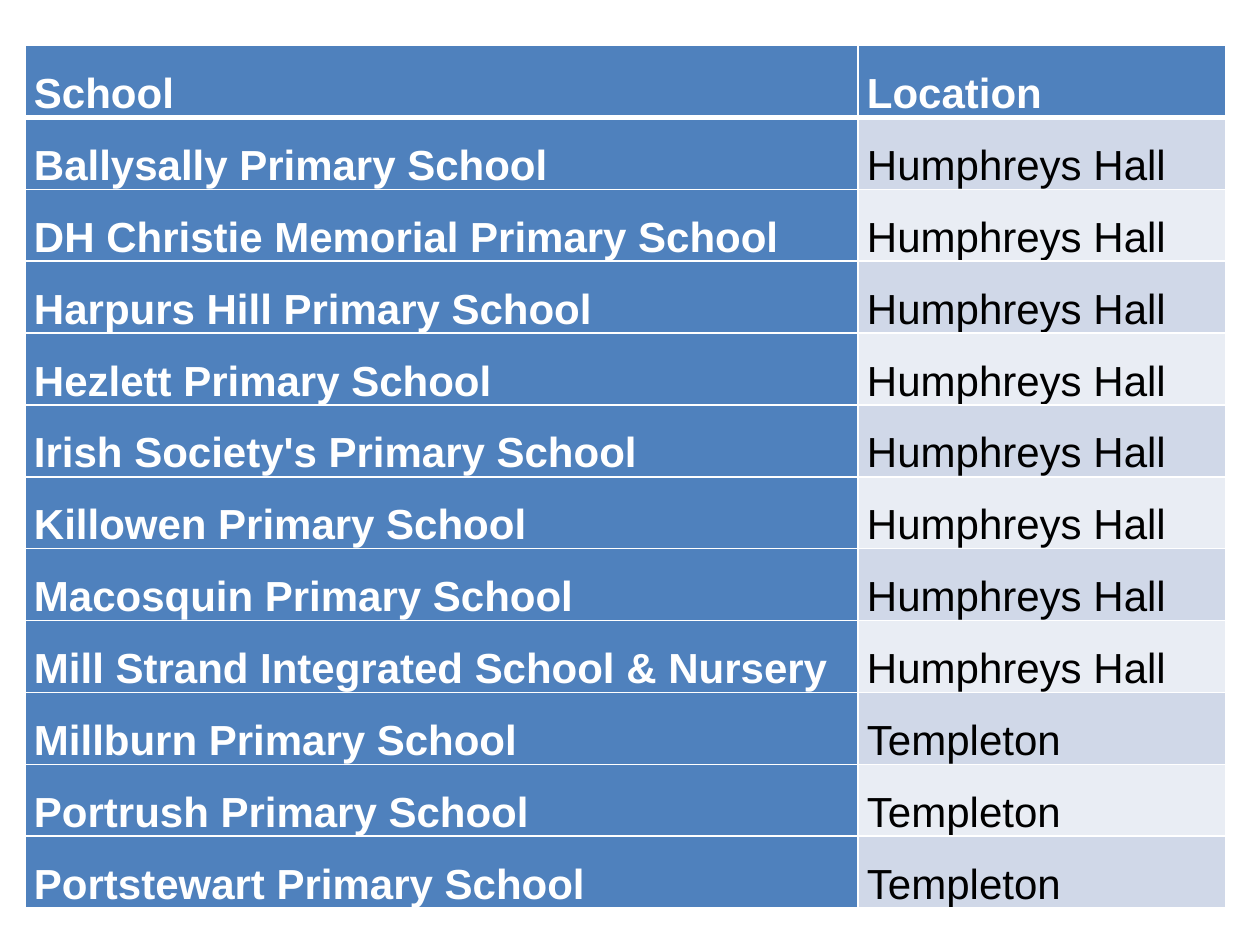
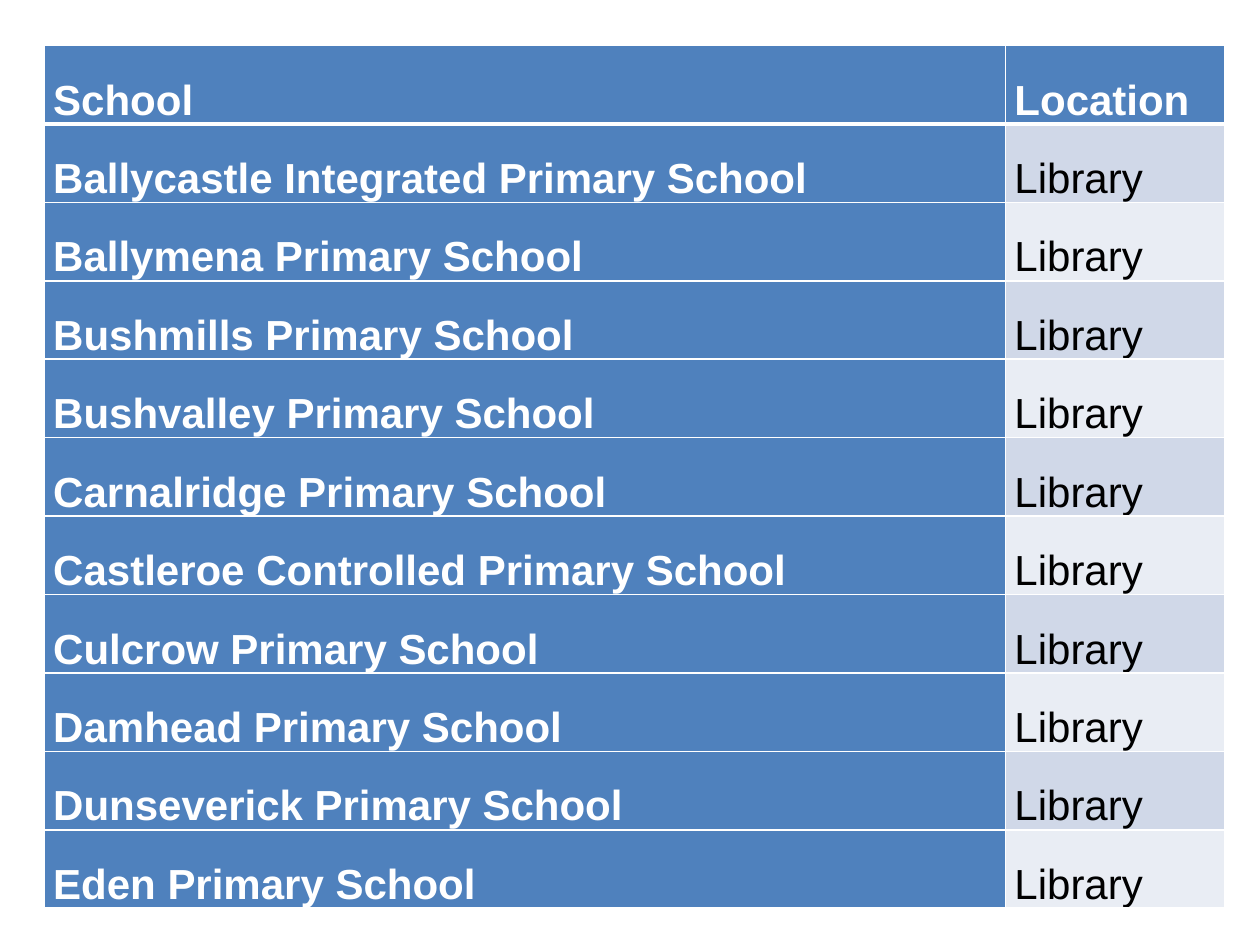
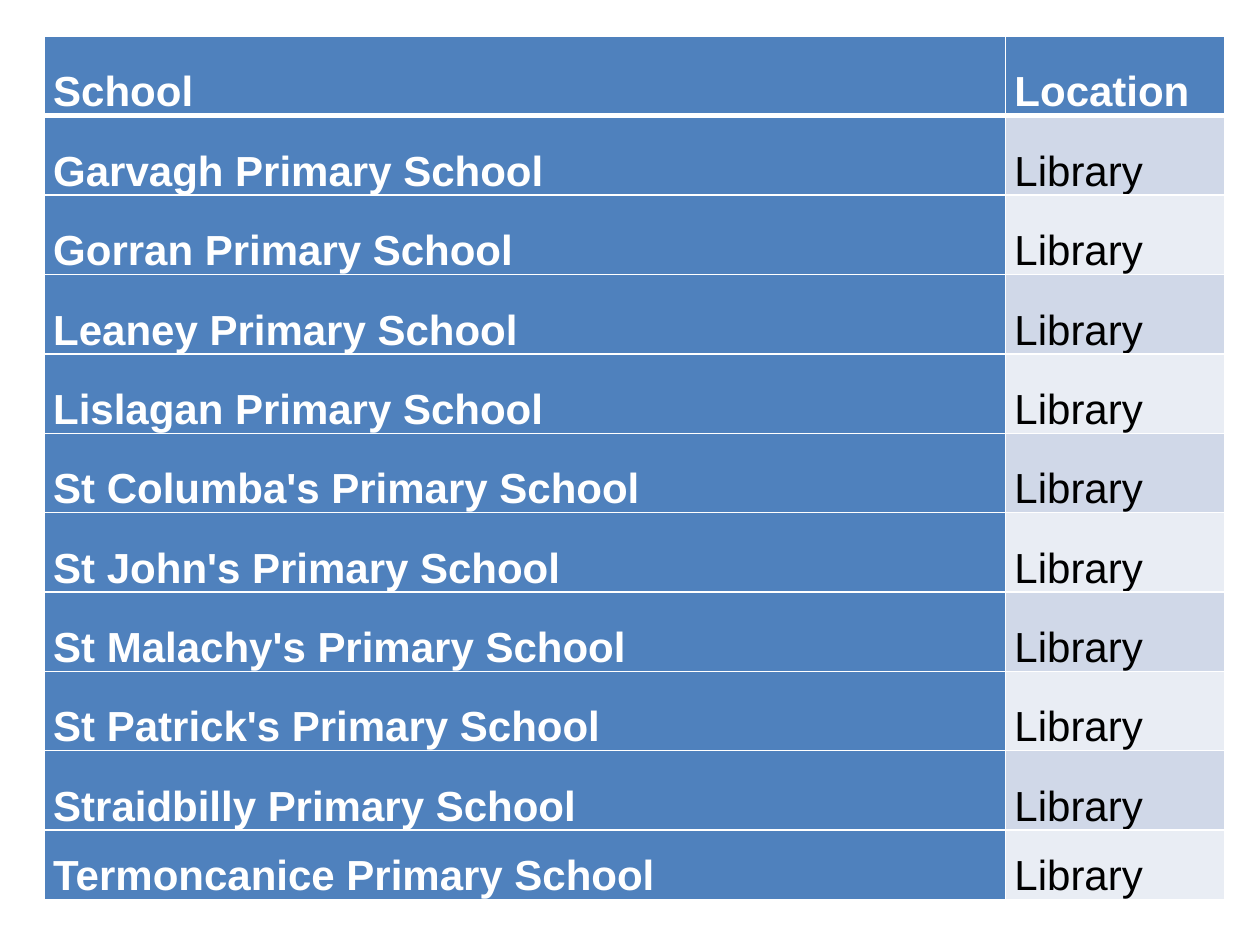
from lxml import etree
from pptx import Presentation
from pptx.dml.color import RGBColor
from pptx.enum import text
from pptx.oxml import ns
from pptx.util import Pt

# Shared style
BLUE = RGBColor(0x4F, 0x81, 0xBD)
BAND_DARK = RGBColor(0xD0, 0xD8, 0xE8)
BAND_LIGHT = RGBColor(0xE9, 0xED, 0xF4)
WHITE = RGBColor(0xFF, 0xFF, 0xFF)
BLACK = RGBColor(0x00, 0x00, 0x00)
FONT = "Arial"
FONT_SIZE = Pt(24)
LINE_SPACING = 1.07
CELL_MARGIN = Pt(5.04)
THIN, THICK = Pt(1), Pt(3)
TABLE_HEIGHT = 493.2
HEADER = ("School", "Location")

# Schools grouped by location
HALL_SCHOOLS = [
    "Ballysally Primary School",
    "DH Christie Memorial Primary School",
    "Harpurs Hill Primary School",
    "Hezlett Primary School",
    "Irish Society's Primary School",
    "Killowen Primary School",
    "Macosquin Primary School",
    "Mill Strand Integrated School & Nursery",
]
TEMPLETON_SCHOOLS = [
    "Millburn Primary School",
    "Portrush Primary School",
    "Portstewart Primary School",
]
LIBRARY_SCHOOLS_B_TO_E = [
    "Ballycastle Integrated Primary School",
    "Ballymena Primary School",
    "Bushmills Primary School",
    "Bushvalley Primary School",
    "Carnalridge Primary School",
    "Castleroe Controlled Primary School",
    "Culcrow Primary School",
    "Damhead Primary School",
    "Dunseverick Primary School",
    "Eden Primary School",
]
LIBRARY_SCHOOLS_G_TO_T = [
    "Garvagh Primary School",
    "Gorran Primary School",
    "Leaney Primary School",
    "Lislagan Primary School",
    "St Columba's Primary School",
    "St John's Primary School",
    "St Malachy's Primary School",
    "St Patrick's Primary School",
    "Straidbilly Primary School",
    "Termoncanice Primary School",
]


def located(schools, location):
    return [(school, location) for school in schools]


class Deck:
    """Holds the presentation, its style and the current slide."""

    def __init__(self):
        self.prs = Presentation()
        self.prs.slide_width, self.prs.slide_height = Pt(720), Pt(540)
        self.slide = None

    def new_slide(self):
        self.slide = self.prs.slides.add_slide(self.prs.slide_layouts[6])

    def borders(self, cell, top, bottom):
        tc_pr = cell._tc.get_or_add_tcPr()
        widths = {"lnL": THIN, "lnR": THIN, "lnT": top, "lnB": bottom}
        for side, width in widths.items():
            ln = etree.SubElement(tc_pr, ns.qn(f"a:{side}"), w=str(width))
            fill = etree.SubElement(ln, ns.qn("a:solidFill"))
            etree.SubElement(fill, ns.qn("a:srgbClr"), val=str(WHITE))

    def cell(self, cell, label, row, col):
        # Borders come before the fill in the cell properties
        self.borders(cell, THICK if row == 1 else THIN, THICK if row == 0 else THIN)
        strong = row == 0 or col == 0
        cell.fill.solid()
        cell.fill.fore_color.rgb = BLUE if strong else (BAND_DARK if row % 2 else BAND_LIGHT)
        cell.vertical_anchor = text.MSO_ANCHOR.BOTTOM
        cell.margin_left = cell.margin_right = CELL_MARGIN
        cell.margin_top = cell.margin_bottom = 0
        p = cell.text_frame.paragraphs[0]
        p.text = label
        p.line_spacing = LINE_SPACING
        p.font.name, p.font.size, p.font.bold = FONT, FONT_SIZE, strong
        p.font.color.rgb = WHITE if strong else BLACK

    def table(self, left, top, col_widths, schools, last_height=None):
        """Rows share the height equally, unless the last one is set apart."""
        rows = [HEADER, *schools]
        height = TABLE_HEIGHT / len(rows)
        if last_height:
            height = (TABLE_HEIGHT - last_height) / (len(rows) - 1)
        frame = self.slide.shapes.add_table(
            len(rows), len(HEADER), Pt(left), Pt(top), Pt(sum(col_widths)), Pt(TABLE_HEIGHT))
        table = frame.table
        table.first_row = table.horz_banding = False
        for column, width in zip(table.columns, col_widths):
            column.width = Pt(width)
        for r, labels in enumerate(rows):
            table.rows[r].height = Pt(height)
            for c, label in enumerate(labels):
                self.cell(table.cell(r, c), label, r, c)
        if last_height:
            table.rows[len(rows) - 1].height = Pt(last_height)


def main():
    deck = Deck()

    # Humphreys Hall and Templeton
    deck.new_slide()
    deck.table(14.4, 26, (476, 209.8),
               located(HALL_SCHOOLS, "Humphreys Hall") + located(TEMPLETON_SCHOOLS, "Templeton"))

    # Library, B to E
    library_widths = (549.3, 125.3)
    deck.new_slide()
    deck.table(25.4, 26, library_widths, located(LIBRARY_SCHOOLS_B_TO_E, "Library"))

    # Library, G to T
    deck.new_slide()
    deck.table(25.4, 20.8, library_widths, located(LIBRARY_SCHOOLS_G_TO_T, "Library"),
               last_height=39.6)

    deck.prs.save("out.pptx")


if __name__ == "__main__":
    main()
